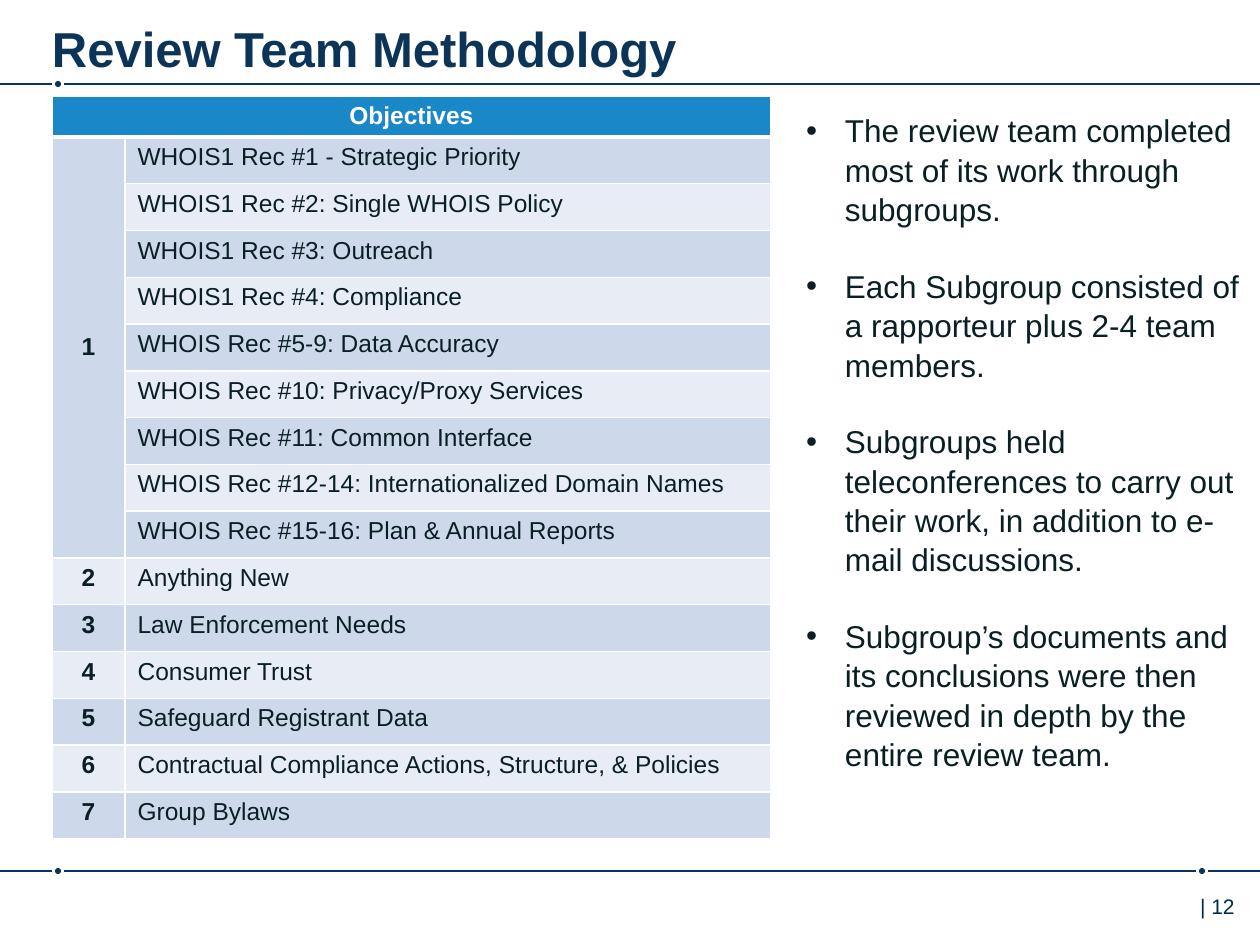
"""Build the review team methodology slide: objectives table and working-method bullets."""
from lxml.etree import SubElement
from pptx import Presentation
from pptx.dml.color import RGBColor
from pptx.enum.shapes import MSO_CONNECTOR as CONNECTOR, MSO_SHAPE as SHAPE
from pptx.enum.text import MSO_ANCHOR as ANCHOR, MSO_AUTO_SIZE as AUTO_SIZE, PP_ALIGN as ALIGN
from pptx.oxml.ns import qn
from pptx.util import Pt

PX = 914400 / 126
COLORS = {
    "navy": "0C3458", "ink": "0A1F24", "page": "002B49", "white": "FFFFFF",
    "header": "1A87C9", "band_dark": "CDD9EB", "band_light": "E8EDF5",
}
RECOMMENDATIONS = [
    "WHOIS1 Rec #1 - Strategic Priority",
    "WHOIS1 Rec #2: Single WHOIS Policy",
    "WHOIS1 Rec #3: Outreach",
    "WHOIS1 Rec #4: Compliance",
    "WHOIS Rec #5-9: Data Accuracy",
    "WHOIS Rec #10: Privacy/Proxy Services",
    "WHOIS Rec #11: Common Interface",
    "WHOIS Rec #12-14: Internationalized Domain Names",
    "WHOIS Rec #15-16: Plan & Annual Reports",
]
OTHER_OBJECTIVES = [
    "Anything New",
    "Law Enforcement Needs",
    "Consumer Trust",
    "Safeguard Registrant Data",
    "Contractual Compliance Actions, Structure, & Policies",
    "Group Bylaws",
]
WORKING_METHODS = [
    "The review team completed most of its work through subgroups.",
    "Each Subgroup consisted of a rapporteur plus 2-4 team members.",
    "Subgroups held teleconferences to carry out their work, in addition to e-mail discussions.",
    "Subgroup’s documents and its conclusions were then reviewed in depth by the entire review team.",
]


def px(length):
    return round(length * PX)


def rgb(color):
    return RGBColor.from_string(COLORS[color])


def write(paragraph, text, size=14, color="ink", bold=False, align=ALIGN.LEFT,
          before=0, spacing=1.0, hanging=0):
    if hanging:
        properties = paragraph._p.get_or_add_pPr()
        properties.set("marL", str(px(hanging)))
        properties.set("indent", str(-px(hanging)))
        SubElement(properties, qn("a:buFont"), typeface="Arial")
        SubElement(properties, qn("a:buChar"), char="•")
    paragraph.alignment = align
    paragraph.space_before = Pt(before)
    paragraph.line_spacing = spacing
    run = paragraph.add_run()
    run.text = text
    run.font.name = "Arial"
    run.font.size = Pt(size)
    run.font.bold = bold
    run.font.color.rgb = rgb(color)


class MethodologySlide:
    def __init__(self, presentation):
        self.slide = presentation.slides.add_slide(presentation.slide_layouts[1])
        self.shapes = self.slide.shapes

    def frame(self, shape, box, insets):
        shape.left, shape.top, shape.width, shape.height = map(px, box)
        frame = shape.text_frame
        frame.word_wrap = True
        frame.auto_size = AUTO_SIZE.NONE
        frame.vertical_anchor = ANCHOR.TOP
        (frame.margin_left, frame.margin_top,
         frame.margin_right, frame.margin_bottom) = map(px, insets)
        return frame

    def title(self, text, box):
        frame = self.frame(self.shapes.title, box, (0, 12, 0, 0))
        write(frame.paragraphs[0], text, size=28, color="navy", bold=True)

    def bullets(self, items, box):
        frame = self.frame(self.slide.placeholders[1], box, (0, 0, 0, 0))
        for index, item in enumerate(items):
            paragraph = frame.add_paragraph() if index else frame.paragraphs[0]
            write(paragraph, item, size=18, hanging=39, spacing=1.04,
                  before=21.5 if index else 0)

    def page_number(self, text, box):
        frame = self.frame(self.shapes.add_textbox(0, 0, 0, 0), box, (29, 6, 0, 6))
        write(frame.paragraphs[0], text, size=12, color="page")

    def dot(self, center_x, center_y, diameter=6):
        corner = px(center_x - diameter / 2), px(center_y - diameter / 2)
        dot = self.shapes.add_shape(SHAPE.OVAL, *corner, px(diameter), px(diameter))
        dot.shadow.inherit = False
        dot.fill.solid()
        dot.fill.fore_color.rgb = rgb("navy")
        dot.line.fill.background()

    def rule(self, start, end, y):
        rule = self.shapes.add_connector(CONNECTOR.STRAIGHT, px(start), px(y), px(end), px(y))
        rule.line.color.rgb = rgb("navy")
        rule.line.width = Pt(1)
        SubElement(rule._element.spPr, qn("a:effectLst"))

    def dotted_rule(self, y, dots, gap=6):
        start = 0
        for center in dots:
            self.rule(start, center - gap, y)
            self.dot(center, y)
            start = center + gap
        self.rule(start, 1260, y)

    def cell(self, cell, fill, bottom=1):
        properties = cell._tc.get_or_add_tcPr()
        for side, width in (("lnL", 1), ("lnR", 1), ("lnT", 1), ("lnB", bottom)):
            border = SubElement(properties, qn(f"a:{side}"), w=str(Pt(width)))
            SubElement(SubElement(border, qn("a:solidFill")), qn("a:srgbClr"), val=COLORS["white"])
        cell.fill.solid()
        cell.fill.fore_color.rgb = rgb(fill)

    def objectives(self, heading, recommendations, others, box, header_height=41, number_width=73):
        left, top, width, height = box
        rows = recommendations + others
        table = self.shapes.add_table(len(rows) + 1, 2, *map(px, box)).table
        table.columns[0].width = px(number_width)
        table.columns[1].width = px(width - number_width)
        table.rows[0].height = px(header_height)
        for cell in table.rows[0].cells:
            self.cell(cell, "header", bottom=3)
        for index, objective in enumerate(rows, 1):
            table.rows[index].height = px((height - header_height) / len(rows))
            for cell in table.rows[index].cells:
                self.cell(cell, "band_dark" if index % 2 else "band_light")
            write(table.cell(index, 1).text_frame.paragraphs[0], objective)

        table.cell(0, 0).merge(table.cell(0, 1))
        write(table.cell(0, 0).text_frame.paragraphs[0], heading, color="white",
              bold=True, align=ALIGN.CENTER)
        first_group = table.cell(1, 0)
        first_group.merge(table.cell(len(recommendations), 0))
        first_group.vertical_anchor = ANCHOR.MIDDLE
        numbered = [first_group] + [table.cell(row, 0)
                                    for row in range(len(recommendations) + 1, len(rows) + 1)]
        for number, cell in enumerate(numbered, 1):
            write(cell.text_frame.paragraphs[0], str(number), bold=True, align=ALIGN.CENTER)


def main():
    presentation = Presentation()
    presentation.slide_width, presentation.slide_height = px(1260), px(945)
    page = MethodologySlide(presentation)
    page.dotted_rule(84, [58])
    page.dotted_rule(871, [58, 1202])
    page.page_number("| 12", (1171, 888, 110, 50))
    page.title("Review Team Methodology", (52, 6, 1104, 62))
    page.bullets(WORKING_METHODS, (806, 110, 436, 649))
    page.objectives("Objectives", RECOMMENDATIONS, OTHER_OBJECTIVES, (52, 96, 719, 743))
    presentation.save("out.pptx")


if __name__ == "__main__":
    main()
